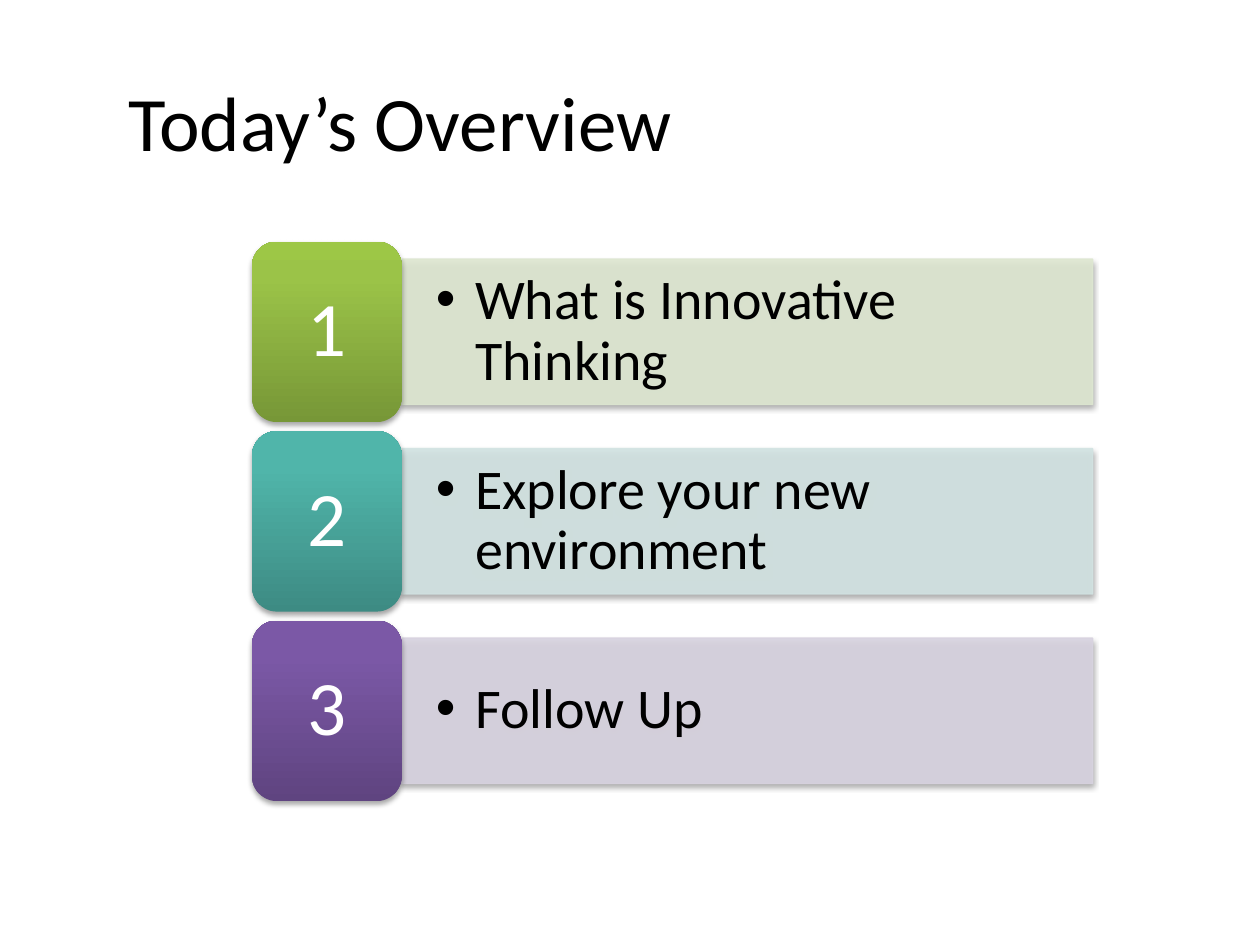
"""Build the overview slide: three numbered agenda rows under a title."""
from copy import deepcopy

from lxml import etree
from pptx import Presentation
from pptx import util as u
from pptx.dml.color import RGBColor
from pptx.enum import shapes, text
from pptx.oxml import ns

BLACK = RGBColor(0x00, 0x00, 0x00)
WHITE = RGBColor(0xFF, 0xFF, 0xFF)
GREEN = [RGBColor.from_string(c) for c in ("779737", "9BC348", "9DC746")]
TEAL = [RGBColor.from_string(c) for c in ("3D8B83", "50B5AA", "4EB8AC")]
PURPLE = [RGBColor.from_string(c) for c in ("5F4480", "7B58A6", "7C57A8")]
PALE_GREEN = RGBColor(0xDE, 0xE7, 0xD1)
PALE_TEAL = RGBColor(0xD2, 0xE3, 0xE2)
PALE_PURPLE = RGBColor(0xD8, 0xD3, 0xE0)

AGENDA = [
    ("What is Innovative Thinking", GREEN, PALE_GREEN),
    ("Explore your new environment", TEAL, PALE_TEAL),
    ("Follow Up", PURPLE, PALE_PURPLE),
]
FIRST_TOP, ROW_PITCH = 4.87, 3.82
TILE_LEFT, TILE_WIDTH, TILE_HEIGHT = 5.08, 3.02, 3.64
BAR_WIDTH, BAR_HEIGHT = 13.93, 2.93


def add_element(parent, tag, **attributes):
    element = etree.SubElement(parent, ns.qn(tag))
    for name, value in attributes.items():
        element.set(name, str(value))
    return element


def write_text(shape, content, size, color, align=text.PP_ALIGN.LEFT,
               margins=(0.25, 0.13), spacing=None, bullet=False):
    frame = shape.text_frame
    frame.word_wrap = True
    frame.auto_size = text.MSO_AUTO_SIZE.NONE
    frame.vertical_anchor = text.MSO_ANCHOR.MIDDLE
    frame.margin_left = frame.margin_right = u.Cm(margins[0])
    frame.margin_top = frame.margin_bottom = u.Cm(margins[1])
    frame.text = content
    paragraph = frame.paragraphs[0]
    paragraph.alignment = align
    if spacing:
        paragraph.line_spacing = spacing
    if bullet:
        properties = paragraph._p.get_or_add_pPr()
        properties.set("marL", str(u.Cm(0.79)))
        properties.set("indent", str(u.Cm(-0.79)))
        add_element(properties, "a:buFont", typeface="Arial")
        add_element(properties, "a:buChar", char="•")
    font = paragraph.runs[0].font
    font.name = "Calibri"
    font.size = u.Pt(size)
    font.color.rgb = color


class OverviewSlide:
    def __init__(self, presentation):
        self.slide = presentation.slides.add_slide(presentation.slide_layouts[5])

    def title(self, content):
        title = self.slide.shapes.title
        title.left, title.top = u.Cm(2.34), u.Cm(0.84)
        title.width, title.height = u.Cm(22.43), u.Cm(3.18)
        write_text(title, content, 44, BLACK)

    def box(self, kind, left, top, width, height):
        shape = self.slide.shapes.add_shape(
            kind, u.Cm(left), u.Cm(top), u.Cm(width), u.Cm(height))
        shape.line.fill.background()
        shape.shadow.inherit = False
        effects = shape._element.spPr.find(ns.qn("a:effectLst"))
        shadow = add_element(effects, "a:outerShdw", blurRad=u.Pt(3.1),
                             dist=u.Pt(1.8), dir=5400000, rotWithShape=0)
        shade = add_element(shadow, "a:srgbClr", val=BLACK)
        add_element(shade, "a:alpha", val=35000)
        return shape

    def bar(self, content, top, color):
        bar = self.box(shapes.MSO_SHAPE.RECTANGLE, TILE_LEFT + TILE_WIDTH,
                       top, BAR_WIDTH, BAR_HEIGHT)
        bar.line.width = u.Pt(0.75)
        for fill in (bar.fill, bar.line.fill):
            fill.solid()
            fill.fore_color.rgb = color
        for solid in bar._element.spPr.iter(ns.qn("a:solidFill")):
            add_element(solid[0], "a:alpha", val=90000)
        write_text(bar, content, 32, BLACK, margins=(0.69, 0.36),
                   spacing=0.9, bullet=True)

    def tile(self, number, top, colors):
        tile = self.box(shapes.MSO_SHAPE.ROUNDED_RECTANGLE, TILE_LEFT,
                        top, TILE_WIDTH, TILE_HEIGHT)
        tile.fill.gradient()
        tile.fill.gradient_angle = 90
        stops = next(tile._element.spPr.iter(ns.qn("a:gsLst")))
        stops.append(deepcopy(stops[-1]))
        for stop, position, color in zip(tile.fill.gradient_stops, (0, 0.8, 1), colors):
            stop.position = position
            stop.color.rgb = color
        write_text(tile, str(number), 44, WHITE, align=text.PP_ALIGN.CENTER,
                   margins=(0.6, 0.37), spacing=0.9)


def main():
    presentation = Presentation()
    presentation.slide_width, presentation.slide_height = u.Cm(25.4), u.Cm(19.05)
    overview = OverviewSlide(presentation)
    overview.title("Today’s Overview")
    for index, (topic, tile_colors, bar_color) in enumerate(AGENDA):
        top = FIRST_TOP + index * ROW_PITCH
        overview.bar(topic, top + (TILE_HEIGHT - BAR_HEIGHT) / 2, bar_color)
        overview.tile(index + 1, top, tile_colors)
    presentation.save("out.pptx")


if __name__ == "__main__":
    main()
